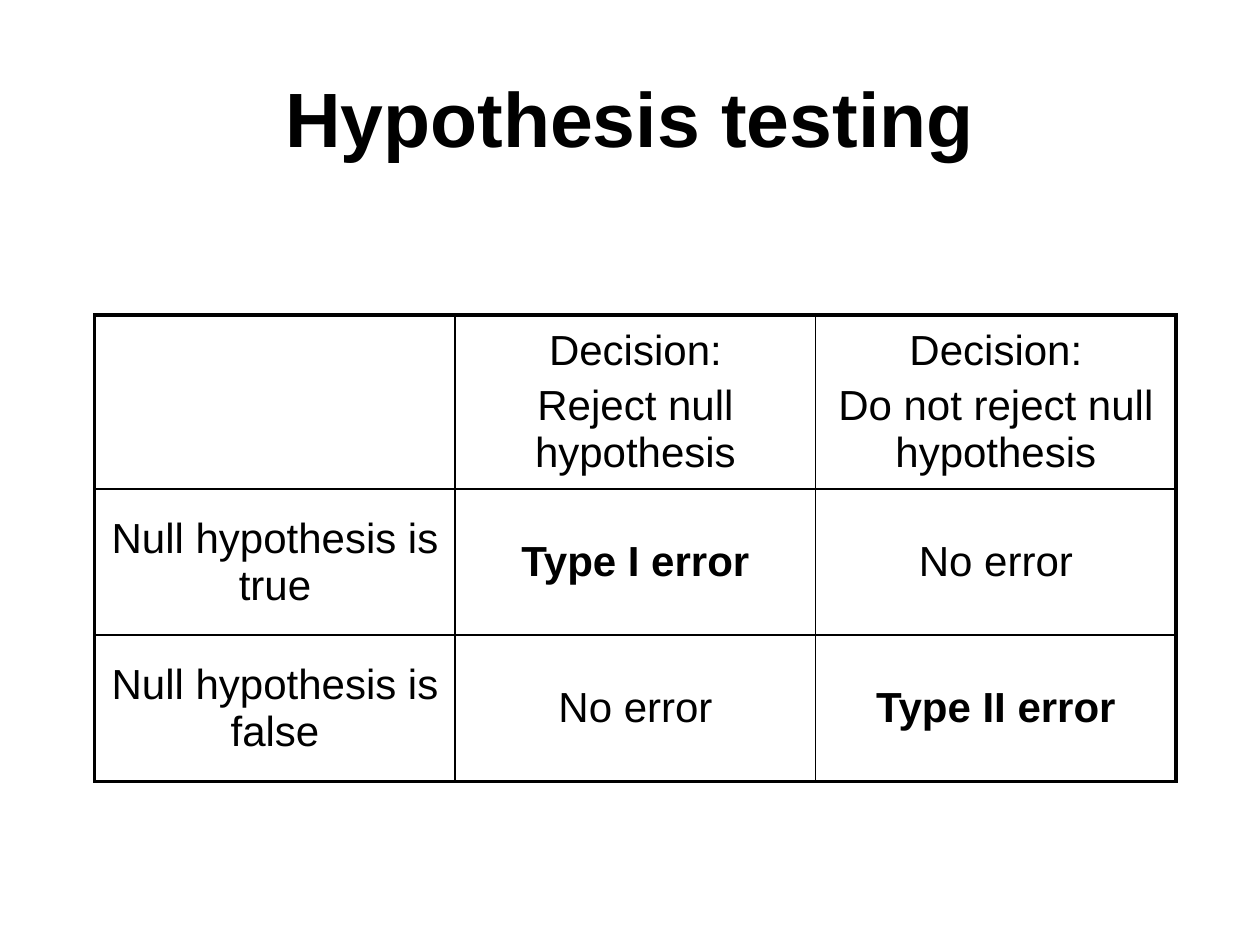
from dataclasses import dataclass

import pptx
import pptx.dml.color
import pptx.enum.text
import pptx.oxml.ns
import pptx.util
from lxml import etree
from pptx.util import Cm, Pt


@dataclass(frozen=True)
class Theme:
    font: str = "Arial"
    ink: pptx.dml.color.RGBColor = pptx.dml.color.RGBColor(0, 0, 0)
    title_size: int = 44
    cell_size: int = 24
    outer_line: float = 2.25
    inner_line: float = 1


THEME = Theme()
HEADER_HEIGHT = 3.51
# Each cell is a list of paragraphs
DECISION_TABLE = [
    [[], ["Decision:", "Reject null hypothesis"],
     ["Decision:", "Do not reject null hypothesis"]],
    [["Null hypothesis is true"], ["Type I error"], ["No error"]],
    [["Null hypothesis is false"], ["No error"], ["Type II error"]],
]


def write_paragraphs(tf, lines, size, bold=False, space=0):
    for i, line in enumerate(lines):
        p = tf.paragraphs[0] if i == 0 else tf.add_paragraph()
        p.text = line
        p.alignment = pptx.enum.text.PP_ALIGN.CENTER
        p.space_before = Pt(space)
        p.font.name = THEME.font
        p.font.size = Pt(size)
        p.font.bold = bold
        p.font.color.rgb = THEME.ink


def add_title(s, text, left, top, width, height):
    tf = s.shapes.add_textbox(Cm(left), Cm(top), Cm(width), Cm(height)).text_frame
    tf.word_wrap = True
    tf.vertical_anchor = pptx.enum.text.MSO_ANCHOR.MIDDLE
    write_paragraphs(tf, [text], THEME.title_size, bold=True)


def set_borders(cell, widths):
    """Draw the cell's sides; widths maps L, R, T, B, in that order, to points."""
    tcPr = cell._tc.get_or_add_tcPr()
    qn = pptx.oxml.ns.qn
    for side, width in widths.items():
        ln = etree.SubElement(tcPr, qn(f"a:ln{side}"), w=str(Pt(width)))
        fill = etree.SubElement(ln, qn("a:solidFill"))
        etree.SubElement(fill, qn("a:srgbClr"), val=str(THEME.ink))


def add_decision_table(s, rows, left, top, width, height):
    """Grid with a heavy frame, equal columns and equal rows below the header."""
    n_rows, n_cols = len(rows), len(rows[0])
    table = s.shapes.add_table(n_rows, n_cols, Cm(left), Cm(top),
                               Cm(width), Cm(height)).table
    table.first_row = table.horz_banding = False
    for column in table.columns:
        column.width = Cm(width / n_cols)
    body_height = (height - HEADER_HEIGHT) / (n_rows - 1)
    for r, row in enumerate(rows):
        table.rows[r].height = Cm(body_height if r else HEADER_HEIGHT)
        for c, lines in enumerate(row):
            cell = table.cell(r, c)
            on_frame = {"L": c == 0, "R": c == n_cols - 1,
                        "T": r == 0, "B": r == n_rows - 1}
            set_borders(cell, {side: THEME.outer_line if outer else THEME.inner_line
                               for side, outer in on_frame.items()})
            cell.fill.background()
            cell.vertical_anchor = pptx.enum.text.MSO_ANCHOR.MIDDLE
            write_paragraphs(cell.text_frame, lines, THEME.cell_size,
                             bold=any(line.startswith("Type") for line in lines),
                             space=0.2 * THEME.cell_size)


def main():
    prs = pptx.Presentation()
    prs.slide_width, prs.slide_height = Cm(25.4), Cm(19.05)
    s = prs.slides.add_slide(prs.slide_layouts[6])
    add_decision_table(s, DECISION_TABLE, 1.91, 6.35, 21.8, 9.4)
    add_title(s, "Hypothesis testing", 1.27, 0.76, 22.86, 3.18)
    prs.save("out.pptx")


if __name__ == "__main__":
    main()
